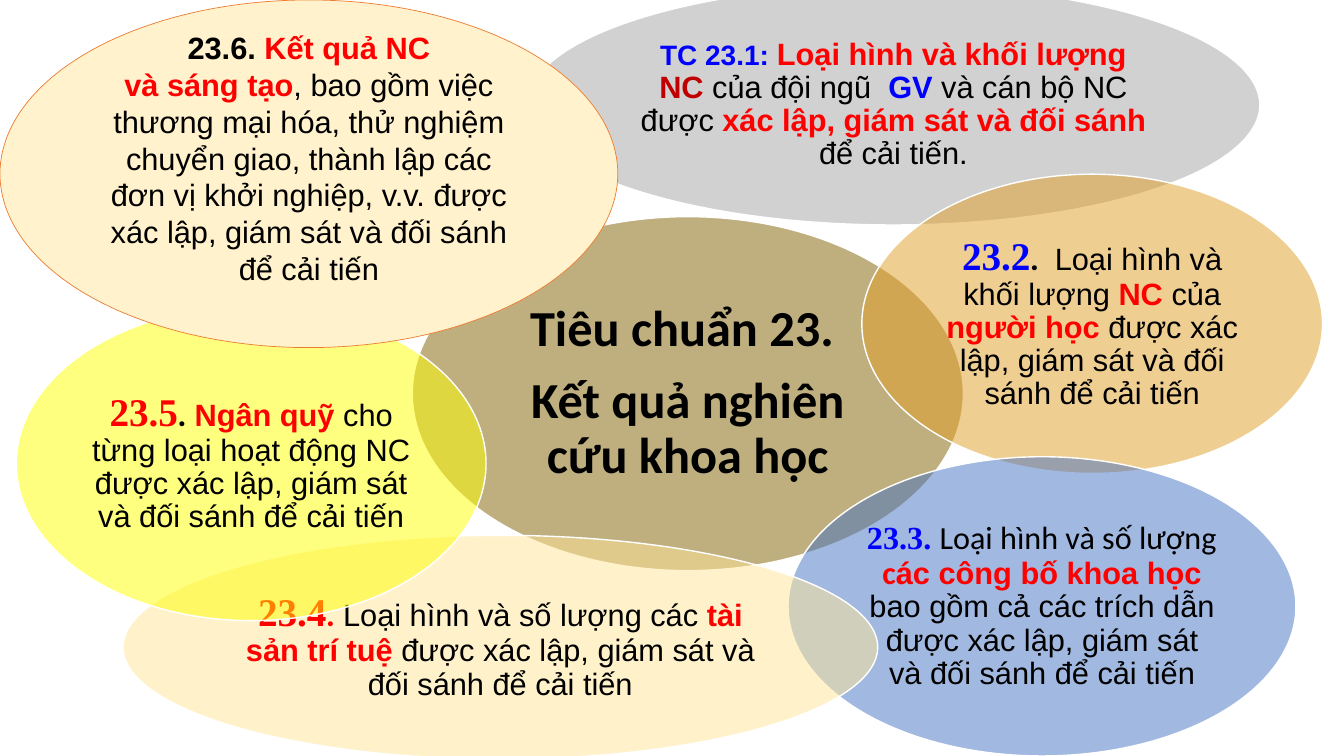
from math import sqrt

from lxml.etree import SubElement as Sub
from pptx import Presentation
from pptx.dml.color import RGBColor
from pptx.enum.shapes import MSO_SHAPE as Kind
from pptx.enum.text import MSO_ANCHOR as Anchor, PP_ALIGN as Align
from pptx.oxml.ns import qn
from pptx.util import Cm, Pt

BLACK, RED, BLUE = "000000", "FF0000", "0000FF"
EDGE = (1 - 1 / sqrt(2)) / 2  # margin of the box inscribed in an ellipse


def rgb(code):
    return RGBColor.from_string(code)


def run(text, color=BLACK, size=22, name="Arial", bold=False, italic=False):
    fmt = dict(size=Pt(size), name=name, bold=bold, italic=italic)
    return text, color, fmt


def plain(text):
    return run(text)


def strong(text, color=RED, size=22):
    return run(text, color, size, bold=True)


def label(text, color, size=28):
    return run(text, color, size, "Times New Roman", True)


def dot(text, color=BLACK):
    return run(text, color, 24, "Calibri", True, True)


def title(text):
    return run(text, BLACK, 36, "Calibri", True)


class Deck:
    def __init__(self, width, height):
        self.prs = Presentation()
        self.prs.slide_width, self.prs.slide_height = Cm(width), Cm(height)
        self.slide = self.prs.slides.add_slide(self.prs.slide_layouts[6])
        self.para = dict(alignment=Align.CENTER, line_spacing=0.9)
        pad = Cm(0.1)
        self.frame = dict(word_wrap=True, vertical_anchor=Anchor.MIDDLE,
                          margin_left=pad, margin_right=pad,
                          margin_top=pad, margin_bottom=pad)

    def oval(self, box, fill, line="FFFFFF", width=1, alpha=None):
        shape = self.slide.shapes.add_shape(Kind.OVAL, *map(Cm, box))
        shape.shadow.inherit = False
        shape.fill.solid()
        shape.fill.fore_color.rgb = rgb(fill)
        shape.line.color.rgb = rgb(line)
        shape.line.width = Pt(width)
        if alpha:
            tint = shape.element.spPr.find(qn("a:solidFill"))[0]
            Sub(tint, qn("a:alpha"), val=str(alpha * 1000))
        return shape

    def text(self, shape, paras, frame=None, para=None):
        body = shape.text_frame
        for key, val in {**self.frame, **(frame or {})}.items():
            setattr(body, key, val)
        for i, runs in enumerate(paras):
            p = body.add_paragraph() if i else body.paragraphs[0]
            gap = Pt(0.35 * runs[0][2]["size"].pt)
            for key, val in {**self.para, "space_after": gap, **(para or {})}.items():
                setattr(p, key, val)
            for words, color, fmt in runs:
                r = p.add_run()
                r.text = words
                r.font.color.rgb = rgb(color)
                for key, val in fmt.items():
                    setattr(r.font, key, val)

    def petal(self, box, fill, *paras):
        self.oval(box, fill, alpha=50)
        x, y, w, h = box
        area = x + w * EDGE, y + h * EDGE, w / sqrt(2), h / sqrt(2)
        self.text(self.slide.shapes.add_textbox(*map(Cm, area)), paras)


def main():
    deck = Deck(33.87, 19.05)

    # Centre
    deck.petal((10.39, 5.46, 13.89, 8.92), "806000",
               [title("Tiêu chuẩn 23. ")],
               [title("Kết quả nghiên cứu khoa học")])

    # Criteria around the centre
    deck.petal((13.28, -0.38, 18.47, 6.05), "A5A5A5", [
        strong("TC 23.1: ", BLUE, 20), strong("Loại hình và khối lượng "),
        strong("NC ", "C00000"), plain("của đội ngũ  "), strong("GV ", BLUE),
        plain("và cán bộ NC được "), strong("xác lập, giám sát và đối sánh "),
        plain("để cải tiến.")])
    deck.petal((21.72, 4.39, 11.61, 7.54), "E19F27", [
        label("23.2", BLUE), dot(".  "), plain("Loại hình và khối lượng "),
        strong("NC "), plain("của "), strong("người học "),
        plain("được xác lập, giám sát và đối sánh để cải tiến")])
    deck.petal((19.86, 11.51, 12.8, 7.54), "4472C4", [
        label("23.3. ", BLUE, 23),
        run("Loại hình và số lượng ", size=23, name="Calibri"),
        run("c", RED, 23, "Calibri", True), strong("ác công bố khoa học"),
        plain(" bao gồm cả các trích dẫn được xác lập, giám sát "
              "và đối sánh để cải tiến")])
    deck.petal((3.1, 13.49, 19.02, 5.64), "FFE699", [
        label("23.4", RED), dot(". ", RED), plain("Loại hình và số lượng các "),
        strong("tài sản trí tuệ "),
        plain("được xác lập, giám sát và đối sánh để cải tiến")])
    deck.petal((0.41, 7.72, 11.84, 7.92), "FFFF00", [
        label("23.5", RED), dot(". "), strong("Ngân quỹ "),
        plain("cho từng loại hoạt động NC được xác lập, giám sát "
              "và đối sánh để cải tiến")])

    # Opaque oval on top, its text raised by a deeper lower margin
    top = deck.oval((0, 0, 15.57, 8.76), "FFF2CC", "ED7D31", 0.5)
    deck.text(top, [
        [strong("23.6. ", BLACK), strong("Kết quả NC")],
        [strong("và sáng tạo"),
         plain(", bao gồm việc thương mại hóa, thử nghiệm chuyển giao, "
               "thành lập các đơn vị khởi nghiệp, v.v. được xác lập, "
               "giám sát và đối sánh để cải tiến")]],
        dict(margin_left=Cm(0.25), margin_right=Cm(0.25),
             margin_top=Cm(0.13), margin_bottom=Cm(0.94)),
        dict(line_spacing=1.0, space_after=Pt(0)))

    deck.prs.save("out.pptx")


if __name__ == "__main__":
    main()
